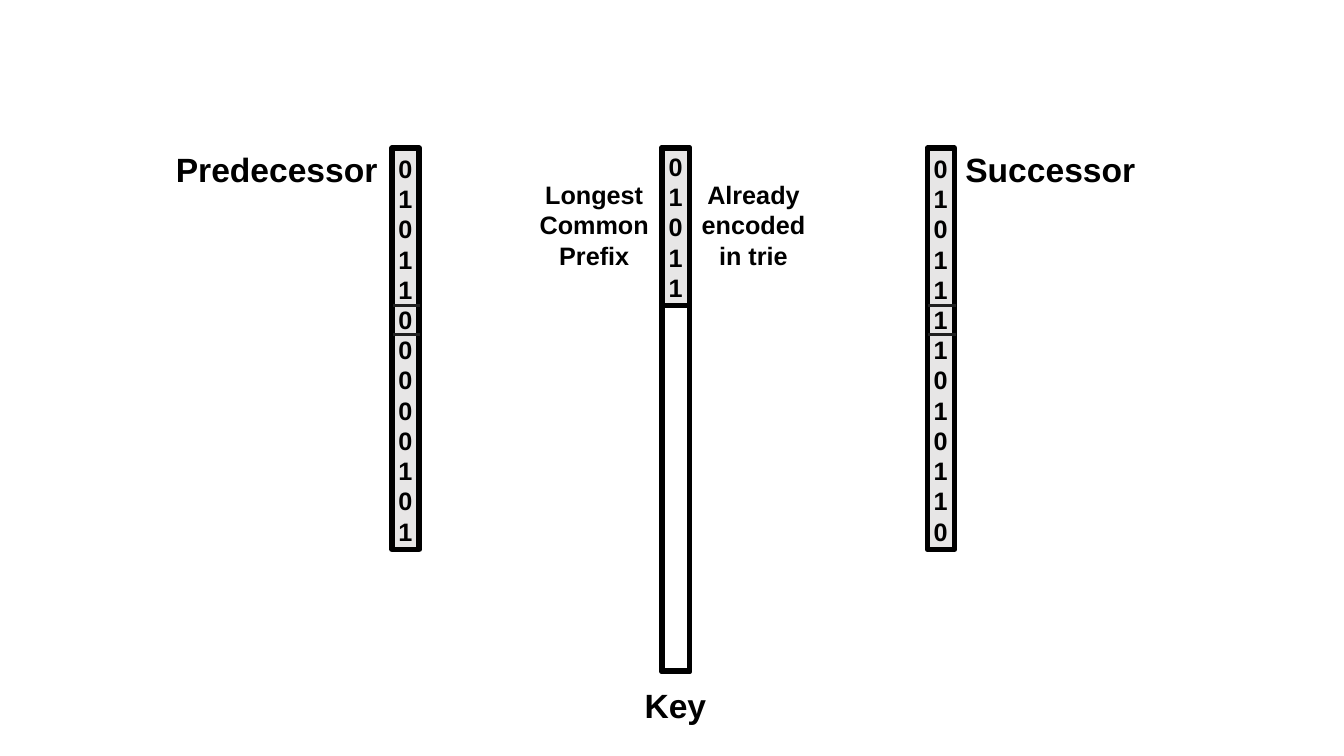
import pptx
import pptx.util
import pptx.dml.color
import pptx.enum.shapes
import pptx.enum.text
import pptx.oxml

Pt = pptx.util.Pt
ALIGN = pptx.enum.text.PP_ALIGN
COLORS = {"ink": "000000", "rule": "202020", "bits": "E7E6E6"}

BAR_TOP = 105.84
BAR_WIDTH = 19.44
BAR_HEIGHT = 286.56
PREFIX_HEIGHT = 112.32
KEY_HEIGHT = 373.68
DIGIT_WIDTH = 24.48
DIGIT_OFFSET = (BAR_WIDTH - DIGIT_WIDTH) / 2
BRANCH_LINES = (239.04, 218.16)


def rgb(name):
    return pptx.dml.color.RGBColor.from_string(COLORS[name])


def write_text(frame, lines, size=18, align=ALIGN.CENTER, wrap=True):
    frame.word_wrap = wrap
    frame.auto_size = pptx.enum.text.MSO_AUTO_SIZE.SHAPE_TO_FIT_TEXT
    for index, line in enumerate(lines):
        paragraph = frame.add_paragraph() if index else frame.paragraphs[0]
        paragraph.alignment = align
        paragraph.line_spacing = Pt(size * 1.2)
        run = paragraph.add_run()
        run.text = line
        run.font.name = "Arial"
        run.font.size = Pt(size)
        run.font.bold = True
        run.font.color.rgb = rgb("ink")


class TrieSlide:
    def __init__(self, slide, outline=4, rule=2.25):
        self.shapes = slide.shapes
        self.outline = outline
        self.rule = rule

    def text(self, lines, left, top, width, height, **style):
        box = self.shapes.add_textbox(Pt(left), Pt(top), Pt(width), Pt(height))
        write_text(box.text_frame, lines, **style)

    def bar(self, left, top, height, fill=None):
        bar = self.shapes.add_shape(
            pptx.enum.shapes.MSO_SHAPE.RECTANGLE,
            Pt(left), Pt(top), Pt(BAR_WIDTH), Pt(height))
        bar.shadow.inherit = False
        bar.line.color.rgb = rgb("ink")
        bar.line.width = Pt(self.outline)
        if fill:
            bar.fill.solid()
            bar.fill.fore_color.rgb = rgb(fill)
        else:
            bar.fill.background()

    def divider(self, left, y):
        divider = self.shapes.add_connector(
            pptx.enum.shapes.MSO_CONNECTOR.STRAIGHT,
            Pt(left), Pt(y), Pt(left + BAR_WIDTH), Pt(y))
        divider.line.color.rgb = rgb("rule")
        divider.line.width = Pt(self.rule)
        effects = pptx.oxml.parse_xml(
            '<a:effectLst xmlns:a="http://schemas.openxmlformats.org/drawingml/2006/main"/>')
        divider._element.spPr.append(effects)

    def digits(self, bits, bar_left, top, height):
        self.text(bits, bar_left + DIGIT_OFFSET, top, DIGIT_WIDTH, height,
                  align=ALIGN.LEFT, wrap=False)

    def neighbour(self, bits, left):
        self.bar(left, BAR_TOP, BAR_HEIGHT, fill="bits")
        for y in BRANCH_LINES:
            self.divider(left + 0.72, y)
        self.digits(bits, left, BAR_TOP, 290.88)

    def key(self, prefix, left):
        self.bar(left, BAR_TOP, KEY_HEIGHT)
        self.bar(left, BAR_TOP + PREFIX_HEIGHT, KEY_HEIGHT - PREFIX_HEIGHT)
        self.bar(left, BAR_TOP, PREFIX_HEIGHT, fill="bits")
        self.digits(prefix, left, 104.4, 115.92)


def main():
    presentation = pptx.Presentation()
    presentation.slide_width = Pt(960)
    presentation.slide_height = Pt(540)
    trie = TrieSlide(presentation.slides.add_slide(presentation.slide_layouts[6]))

    trie.text(["Longest Common Prefix"], 352.08, 124.56, 144.72, 72.72)
    trie.text(["Predecessor"], 102.96, 102.96, 189.36, 36, size=24)
    trie.text(["Successor"], 662.4, 102.96, 175.68, 36, size=24)
    trie.text(["Key"], 394.56, 486, 175.68, 36, size=24)
    trie.neighbour("0101111010110", 662.4)
    trie.neighbour("0101100000101", 280.08)
    trie.text(["Already encoded in trie"], 486, 124.56, 104.4, 72.72)
    trie.key("01011", 473.04)

    presentation.save("out.pptx")


if __name__ == "__main__":
    main()
